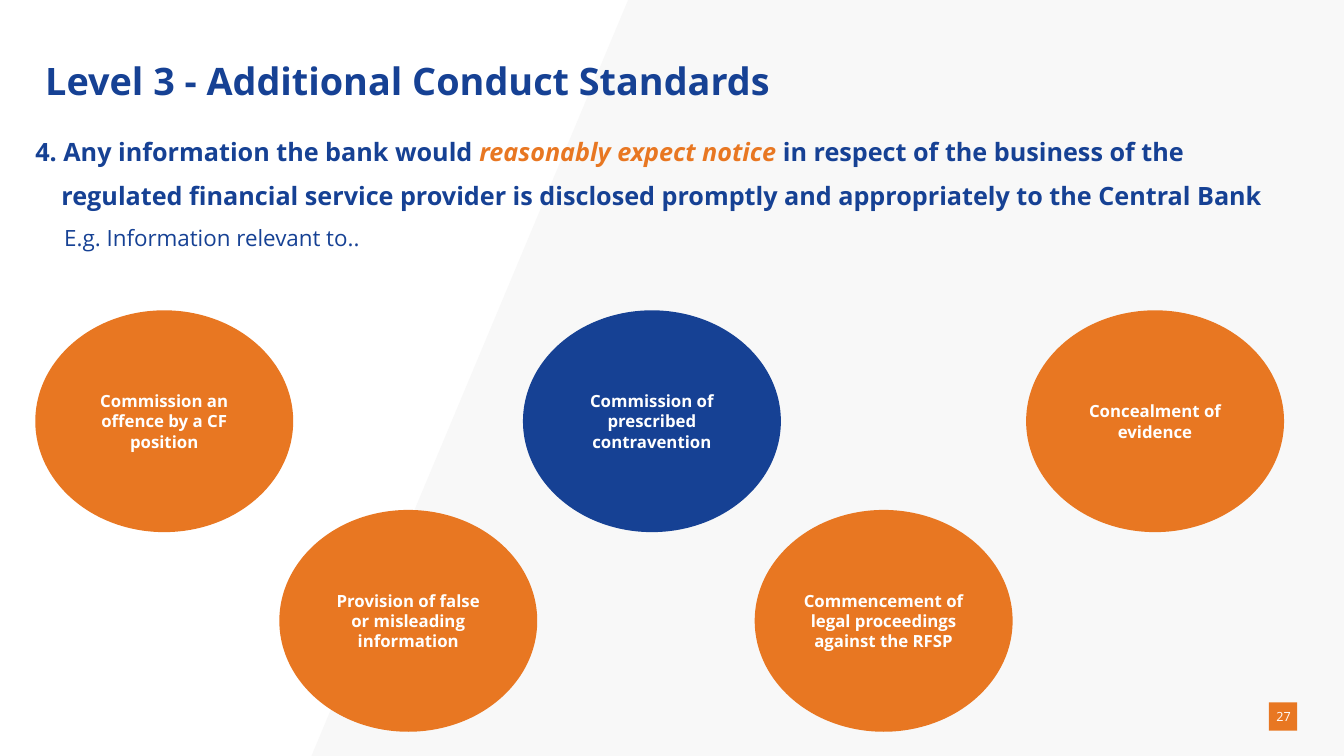
import pptx
import pptx.util
import pptx.dml.color
import pptx.enum.shapes
import pptx.enum.text

Cm = pptx.util.Cm
Kind = pptx.enum.shapes.MSO_SHAPE
Align = pptx.enum.text.PP_ALIGN
Anchor = pptx.enum.text.MSO_ANCHOR
BLUE, ORANGE, WHITE, GREY = "164194", "E87722", "FFFFFF", "F8F8F8"


def color(code):
    return pptx.dml.color.RGBColor.from_string(code)


def paint(shape, code):
    shape.shadow.inherit = False
    shape.fill.solid()
    shape.fill.fore_color.rgb = color(code)
    shape.line.fill.background()


def write(para, text, size=18, ink=BLUE, bold=False, italic=False):
    run = para.add_run()
    run.text = text
    font = run.font
    font.name = "Open Sans"
    font.size = pptx.util.Pt(size)
    font.bold = bold
    font.italic = italic
    font.color.rgb = color(ink)


def frame(shape, left=0.25, anchor=Anchor.TOP):
    text = shape.text_frame
    text.word_wrap = True
    text.auto_size = pptx.enum.text.MSO_AUTO_SIZE.NONE
    text.vertical_anchor = anchor
    text.margin_left, text.margin_right = Cm(left), Cm(0.25)
    text.margin_top = text.margin_bottom = Cm(0.13)
    return text


def backdrop(slide, x, y, wide, high):
    slant = 7.98
    form = slide.shapes.build_freeform(Cm(x), Cm(y + high))
    form.add_line_segments([
        (Cm(x + slant), Cm(y)),
        (Cm(x + wide), Cm(y)),
        (Cm(x + wide), Cm(y + high)),
    ])
    paint(form.convert_to_shape(), GREY)


def number(slide, x, y, side):
    box = slide.shapes.add_shape(Kind.RECTANGLE, Cm(x), Cm(y), Cm(side), Cm(side))
    paint(box, ORANGE)
    label = slide.shapes.add_textbox(Cm(x - 0.25), Cm(y - 0.15), Cm(1.24), Cm(1.02))
    para = frame(label, anchor=Anchor.MIDDLE).paragraphs[0]
    para.alignment = Align.CENTER
    write(para, "27", size=9, ink=WHITE)


def heading(slide, x, y, wide, high):
    title = slide.shapes.title
    title.element.getparent().append(title.element)
    title.left, title.top = Cm(x), Cm(y)
    title.width, title.height = Cm(wide), Cm(high)
    para = frame(title, left=0).paragraphs[0]
    para.alignment = Align.LEFT
    para.line_spacing = 0.9
    write(para, "Level 3 - Additional Conduct Standards", size=27, bold=True)


def body(slide, x, y, wide, high):
    box = slide.shapes.add_textbox(Cm(x), Cm(y), Cm(wide), Cm(high))
    text = frame(box, left=0)
    first = text.paragraphs[0]
    second, third = text.add_paragraph(), text.add_paragraph()
    for para, indent in ((first, 0), (second, 0.66), (third, 0.73)):
        para.line_spacing = 0.9
        para.space_before = pptx.util.Pt(0 if para is first else 12)
        para._p.get_or_add_pPr().set("marL", str(Cm(indent)))
    write(first, "4. Any information the bank would ", bold=True)
    write(first, "reasonably expect notice ", ink=ORANGE, bold=True, italic=True)
    write(first, "in respect of the business of the", bold=True)
    write(second, "regulated financial service provider is disclosed promptly "
                  "and appropriately to the Central Bank", bold=True)
    write(third, "E.g. Information relevant to..", size=16)


def ovals(slide, x, y, wide, high):
    drop = 5.03
    items = (
        (0, 0, ORANGE, "Commission an offence by a CF position"),
        (12.29, 0, BLUE, "Commission of prescribed contravention"),
        (24.97, 0, ORANGE, "Concealment of evidence"),
        (6.15, drop, ORANGE, "Provision of false or misleading information"),
        (18.13, drop, ORANGE, "Commencement of legal proceedings against the RFSP"),
    )
    for dx, dy, fill, text in items:
        oval = slide.shapes.add_shape(
            Kind.OVAL, Cm(x + dx), Cm(y + dy), Cm(wide), Cm(high))
        paint(oval, fill)
        para = frame(oval, anchor=Anchor.MIDDLE).paragraphs[0]
        para.alignment = Align.CENTER
        write(para, text, size=12, ink=WHITE, bold=True)


def main():
    deck = pptx.Presentation()
    deck.slide_width, deck.slide_height = Cm(33.87), Cm(19.05)
    slide = deck.slides.add_slide(deck.slide_layouts[5])
    backdrop(slide, 7.85, 0, 26.02, 19.05)
    number(slide, 31.98, 17.7, 0.71)
    heading(slide, 1.14, 1.45, 24.54, 2.87)
    body(slide, 0.89, 3.38, 32.18, 13.89)
    ovals(slide, 0.89, 7.82, 6.5, 5.59)
    deck.save("out.pptx")


if __name__ == "__main__":
    main()
